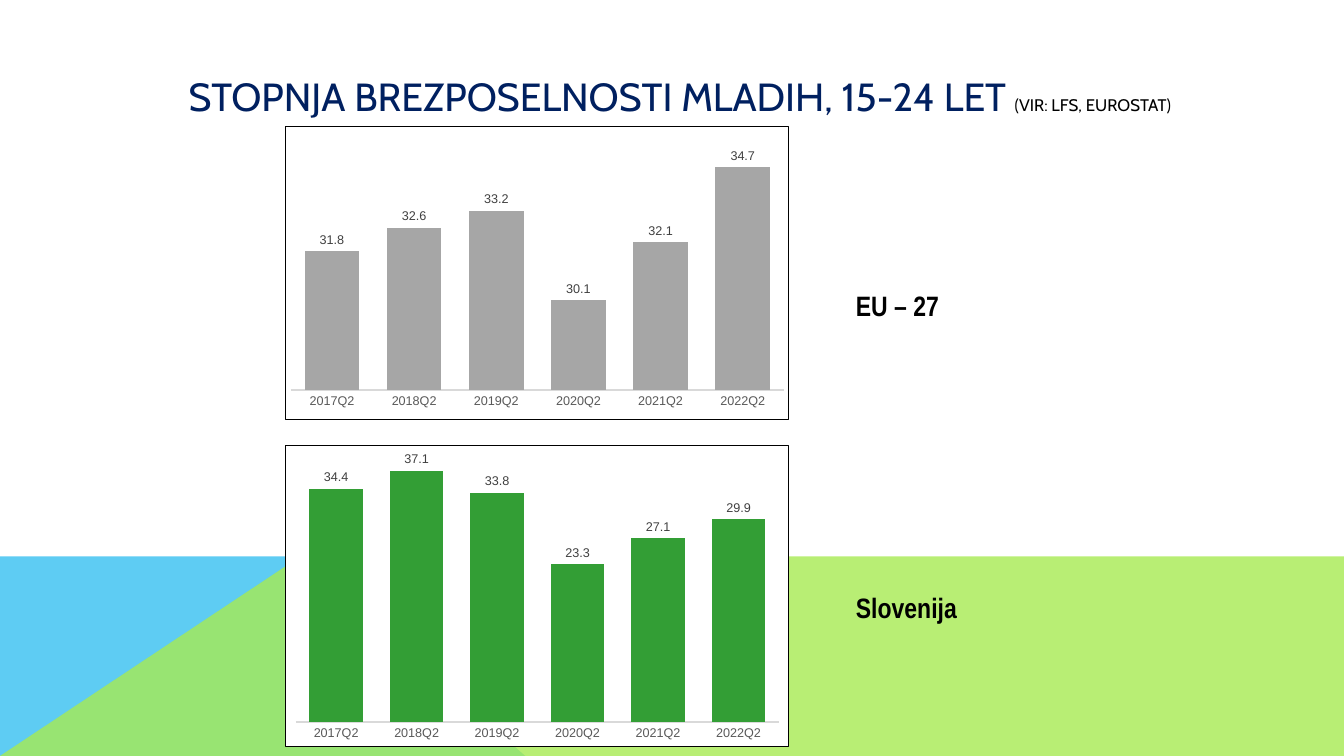
from dataclasses import dataclass

from lxml import etree
from pptx import Presentation
from pptx import util as u
from pptx.chart import data as chart_data
from pptx.dml import color
from pptx.enum import chart as chart_enum
from pptx.enum import text
from pptx.oxml import ns, parse_xml


@dataclass(frozen=True)
class Theme:
    navy: str = "002060"
    black: str = "000000"
    white: str = "FFFFFF"
    sky: str = "5ECCF3"
    lime: str = "A7EA52"
    grey: str = "A6A6A6"
    green: str = "339E35"
    axis_line: str = "D9D9D9"
    axis_text: str = "595959"
    value_text: str = "404040"
    title_font: str = "Cabin"
    label_font: str = "Arial Narrow"
    chart_font: str = "Arial"
    title_size: int = 28
    source_size: int = 12
    label_size: int = 20
    chart_size: int = 9


THEME = Theme()
QUARTERS = [f"{year}Q2" for year in range(2017, 2023)]


def rgb(value):
    return color.RGBColor.from_string(value)


def style_font(font, name, size, fill, bold=False):
    font.name, font.size, font.bold = name, u.Pt(size), bold
    font.color.rgb = rgb(fill)


def add_text(paragraph, content, **font_format):
    run = paragraph.add_run()
    run.text = content
    style_font(run.font, **font_format)


# Background band
def add_polygon(slide, points, fill, opacity=100):
    corners = [(u.Inches(x), u.Inches(y)) for x, y in points]
    builder = slide.shapes.build_freeform(*corners[0], scale=1.0)
    builder.add_line_segments(corners[1:], close=True)
    shape = builder.convert_to_shape()
    shape.shadow.inherit = False
    shape.fill.solid()
    shape.fill.fore_color.rgb = rgb(fill)
    shape.line.fill.background()
    if opacity < 100:
        fill_color = shape._element.spPr.find(".//" + ns.qn("a:srgbClr"))
        etree.SubElement(fill_color, ns.qn("a:alpha"), val=str(opacity * 1000))


def add_band(slide, left, top, width, height):
    right, bottom, peak = left + width, top + height, left + 2.98
    add_polygon(slide, [(left, bottom), (left, top), (peak, top), (left + 5.21, bottom)], THEME.sky)
    add_polygon(slide, [(left, bottom), (peak, top), (right, top), (right, bottom)], THEME.lime, 80)


# Title with its source note
def add_title(slide, left, top, width, height):
    title = slide.shapes.title
    title.left, title.top = u.Inches(left), u.Inches(top)
    title.width, title.height = u.Inches(width), u.Inches(height)
    frame = title.text_frame
    frame.auto_size = text.MSO_AUTO_SIZE.NONE
    frame.vertical_anchor = text.MSO_ANCHOR.MIDDLE
    paragraph = frame.paragraphs[0]
    paragraph.alignment = text.PP_ALIGN.LEFT
    add_text(paragraph, "STOPNJA BREZPOSELNOSTI MLADIH, 15-24 LET ",
             name=THEME.title_font, size=THEME.title_size, fill=THEME.navy)
    add_text(paragraph, "(VIR: LFS, EUROSTAT)",
             name=THEME.title_font, size=THEME.source_size, fill=THEME.black)


# Region name beside a chart
def add_region_label(slide, content, left, top, width, height):
    box = slide.shapes.add_textbox(*map(u.Inches, (left, top, width, height)))
    box.text_frame.word_wrap = True
    add_text(box.text_frame.paragraphs[0], content, name=THEME.label_font,
             size=THEME.label_size, fill=THEME.black, bold=True)


# Column chart of one region
def frame_chart(chart, plot_box):
    x, y, width, height = plot_box
    plot_area = chart._chartSpace.chart.plotArea
    for layout in plot_area.findall(ns.qn("c:layout")):
        plot_area.remove(layout)
    plot_area.insert(0, parse_xml(
        f'<c:layout {ns.nsdecls("c")}><c:manualLayout><c:layoutTarget val="inner"/>'
        f'<c:xMode val="edge"/><c:yMode val="edge"/><c:x val="{x}"/><c:y val="{y}"/>'
        f'<c:w val="{width}"/><c:h val="{height}"/></c:manualLayout></c:layout>'))
    chart._chartSpace.chart.addnext(parse_xml(
        f'<c:spPr {ns.nsdecls("c", "a")}><a:solidFill><a:srgbClr val="{THEME.white}"/></a:solidFill>'
        f'<a:ln w="{u.Pt(0.75)}"><a:solidFill><a:srgbClr val="{THEME.black}"/></a:solidFill></a:ln>'
        '</c:spPr>'))


def add_region_chart(slide, values, fill, box, plot_box, scale, overlap):
    data = chart_data.CategoryChartData(number_format="0.0")
    data.categories = QUARTERS
    data.add_series("Series 1", values)
    chart = slide.shapes.add_chart(
        chart_enum.XL_CHART_TYPE.COLUMN_CLUSTERED, *map(u.Inches, box), data).chart
    chart.has_title = chart.has_legend = False
    style_font(chart.font, THEME.chart_font, THEME.chart_size, THEME.axis_text)
    frame_chart(chart, plot_box)

    for axis in (chart.category_axis, chart.value_axis):
        axis.major_tick_mark = axis.minor_tick_mark = chart_enum.XL_TICK_MARK.NONE
        axis.has_major_gridlines = False
    chart.category_axis.format.line.color.rgb = rgb(THEME.axis_line)
    chart.category_axis.format.line.width = u.Pt(1.5)
    value_axis = chart.value_axis
    value_axis.minimum_scale, value_axis.maximum_scale = scale
    value_axis.tick_label_position = chart_enum.XL_TICK_LABEL_POSITION.NONE
    value_axis.format.line.fill.background()

    plot = chart.plots[0]
    plot.vary_by_categories = False
    plot.gap_width, plot.overlap = 50, overlap
    series = plot.series[0]
    series.format.fill.solid()
    series.format.fill.fore_color.rgb = rgb(fill)
    labels = series.data_labels
    labels.show_value = True
    labels.number_format, labels.number_format_is_linked = "0.0", False
    labels.position = chart_enum.XL_LABEL_POSITION.OUTSIDE_END
    style_font(labels.font, THEME.chart_font, THEME.chart_size, THEME.value_text)


def build_slide(presentation):
    slide = presentation.slides.add_slide(presentation.slide_layouts.get_by_name("Title Only"))
    add_band(slide, 0, 5.52, 13.33, 1.98)
    add_title(slide, 1.77, 0.65, 9.96, 0.6)
    add_region_label(slide, "EU – 27", 8.39, 2.81, 1.69, 0.79)
    add_region_label(slide, "Slovenija", 8.39, 5.81, 1.69, 0.44)
    add_region_chart(slide, [31.8, 32.6, 33.2, 30.1, 32.1, 34.7], THEME.grey,
                     box=(2.83, 1.25, 5, 2.92), plot_box=(0.01, 0.01, 0.98, 0.89),
                     scale=(27, 36), overlap=68)
    add_region_chart(slide, [34.4, 37.1, 33.8, 23.3, 27.1, 29.9], THEME.green,
                     box=(2.83, 4.41, 5, 3), plot_box=(0.02, 0.02, 0.96, 0.9),
                     scale=(0, 40), overlap=-27)


def main():
    presentation = Presentation()
    presentation.slide_width, presentation.slide_height = u.Inches(13.33), u.Inches(7.5)
    build_slide(presentation)
    presentation.save("out.pptx")


if __name__ == "__main__":
    main()
